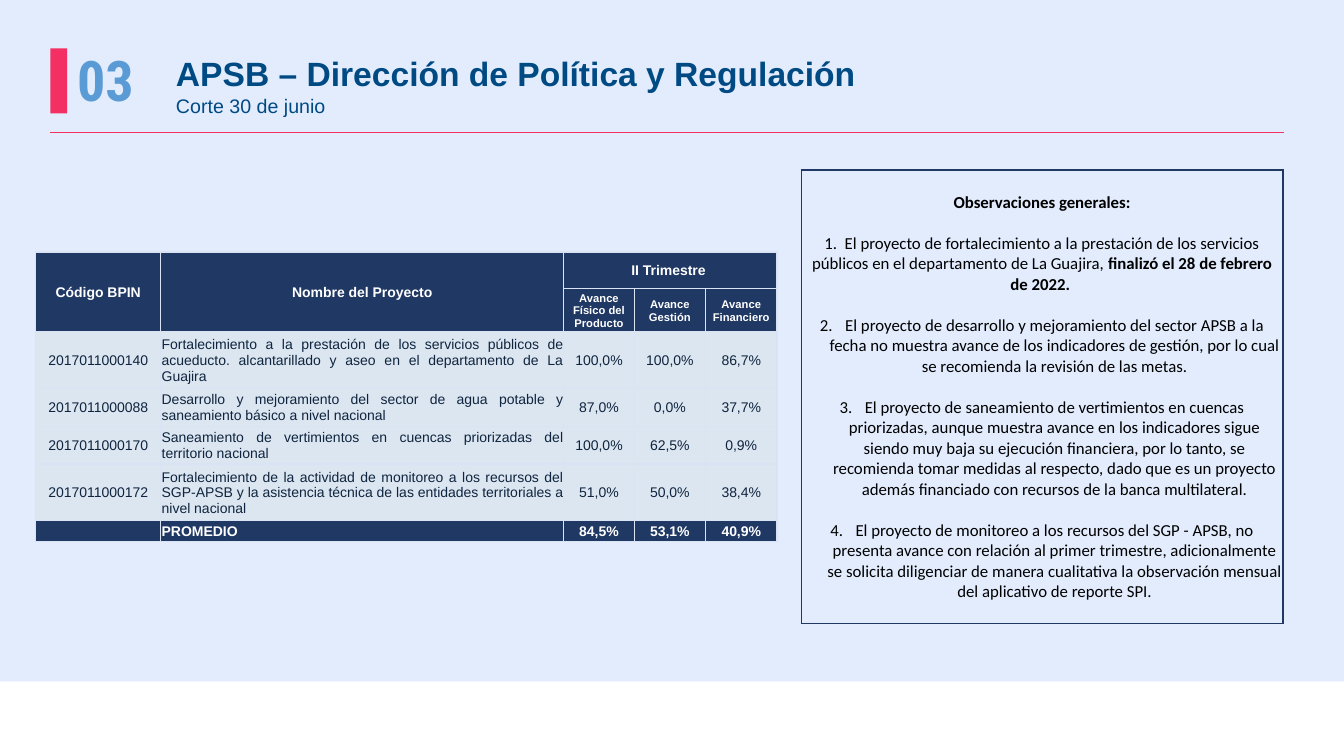
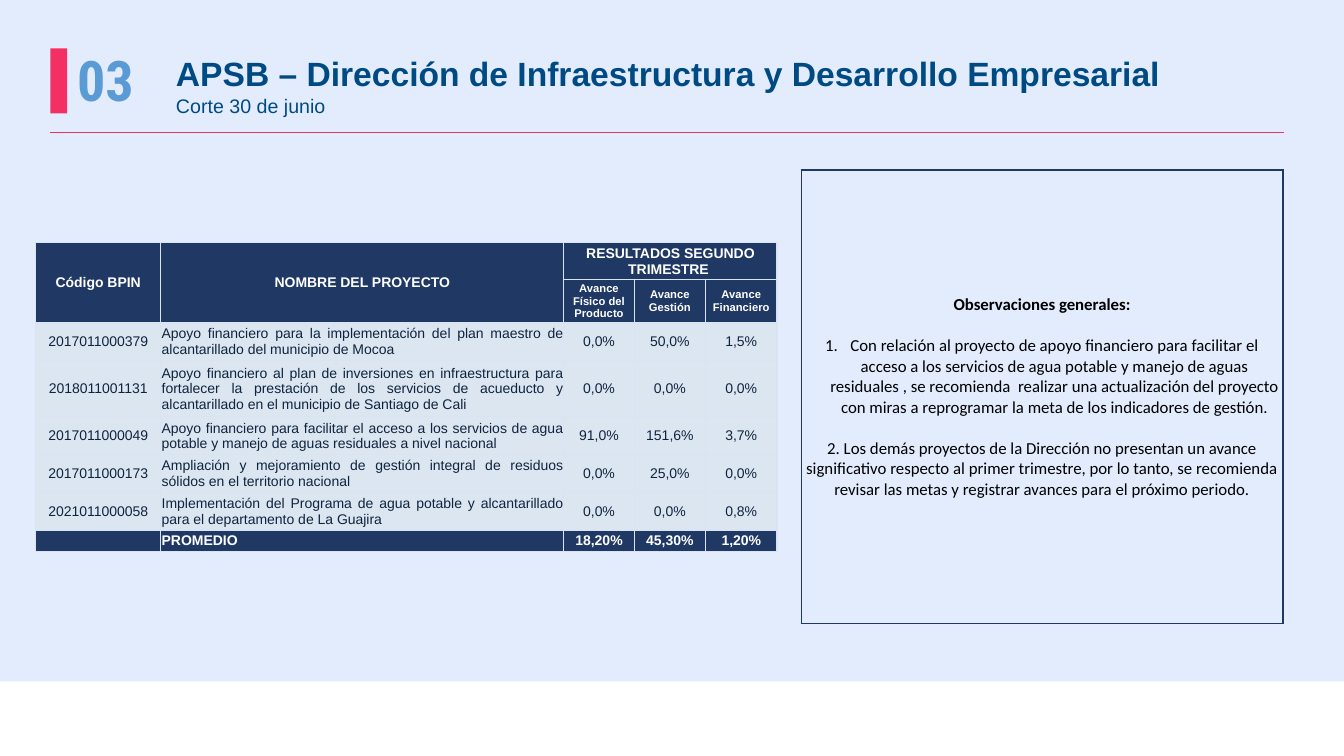
import pptx
import pptx.util
import pptx.dml.color
import pptx.enum.shapes
import pptx.enum.text
import pptx.oxml.ns
import lxml.etree

RGB = pptx.dml.color.RGBColor
ALIGN = pptx.enum.text.PP_ALIGN
ANCHOR = pptx.enum.text.MSO_ANCHOR

PALE_BLUE = RGB(0xE2, 0xEC, 0xFD)
WHITE = RGB(0xFF, 0xFF, 0xFF)
BLACK = RGB(0x00, 0x00, 0x00)
TITLE_BLUE = RGB(0x00, 0x4A, 0x84)
NUMBER_BLUE = RGB(0x5B, 0x9B, 0xD5)
PINK = RGB(0xF4, 0x2F, 0x63)
NAVY = RGB(0x20, 0x38, 0x64)
BODY_FILL = RGB(0xDC, 0xE6, 0xF1)
BODY_TEXT = RGB(0x0F, 0x24, 0x3E)
GRID = RGB(0xDA, 0xE3, 0xF3)

EMU_PER_PX = 9525
COLUMNS = [119, 384, 67, 68, 68]
HEADER_HEIGHTS = [35, 41]
LINE_HEIGHTS = {1: 20, 2: 36, 3: 54}
TABLE_LEFT, TABLE_MIDDLE = 34, 378
NOTE_GAP = 14.65
MEASURES = ["Avance Físico del Producto", "Avance Gestión", "Avance Financiero"]

POLICY = {
    "title": "APSB – Dirección de Política y Regulación",
    "name_header": "Nombre del Proyecto",
    "period": "II Trimestre ",
    "projects": [
        (3, "2017011000140", "Fortalecimiento a la prestación de los servicios públicos de acueducto. alcantarillado y aseo en el departamento de La Guajira ", "100,0%", "100,0%", "86,7%"),
        (2, "2017011000088", "Desarrollo y mejoramiento del sector de agua potable y saneamiento básico a nivel nacional", "87,0%", "0,0%", "37,7%"),
        (2, "2017011000170", "Saneamiento de vertimientos en cuencas priorizadas del territorio nacional", "100,0%", "62,5%", "0,9%"),
        (3, "2017011000172", "Fortalecimiento de la actividad de monitoreo a los recursos del SGP-APSB y la asistencia técnica de las entidades territoriales a nivel nacional", "51,0%", "50,0%", "38,4%"),
    ],
    "averages": ["84,5%", "53,1%", "40,9%"],
    "first_number": 2,
    "notes": [
        (False, [("1.  El proyecto de fortalecimiento a la prestación de los servicios públicos en el departamento de La Guajira, ", False),
                 ("finalizó el 28 de febrero de 2022. ", True)]),
        (True, [("El proyecto de desarrollo y mejoramiento del sector APSB a la fecha no muestra avance de los indicadores de gestión, por lo cual se recomienda la revisión de las metas.", False)]),
        (True, [("El proyecto de saneamiento de vertimientos en cuencas priorizadas, aunque muestra avance en los indicadores sigue siendo muy baja su ejecución financiera, por lo tanto, se recomienda tomar medidas al respecto, dado que es un proyecto además financiado con recursos de la banca multilateral.", False)]),
        (True, [("El proyecto de monitoreo a los recursos del SGP - APSB, no presenta avance con relación al primer trimestre, adicionalmente se solicita diligenciar de manera cualitativa la observación mensual del aplicativo de reporte SPI.", False)]),
    ],
}

INFRASTRUCTURE = {
    "title": "APSB – Dirección de Infraestructura y Desarrollo Empresarial",
    "name_header": "NOMBRE DEL PROYECTO",
    "period": "RESULTADOS SEGUNDO TRIMESTRE ",
    "projects": [
        (2, "2017011000379", "Apoyo financiero para la implementación del plan maestro de alcantarillado del municipio de Mocoa", "0,0%", "50,0%", "1,5%"),
        (3, "2018011001131", "Apoyo financiero al plan de inversiones en infraestructura para fortalecer la prestación de los servicios de acueducto y alcantarillado en el municipio de Santiago de Cali", "0,0%", "0,0%", "0,0%"),
        (2, "2017011000049", "Apoyo financiero para facilitar el acceso a los servicios de agua potable y manejo de aguas residuales a nivel nacional", "91,0%", "151,6%", "3,7%"),
        (2, "2017011000173", "Ampliación y mejoramiento de gestión integral de residuos sólidos en el territorio nacional", "0,0%", "25,0%", "0,0%"),
        (2, "2021011000058", "Implementación del Programa de agua potable y alcantarillado para el departamento de La Guajira", "0,0%", "0,0%", "0,8%"),
    ],
    "averages": ["18,20%", "45,30%", "1,20%"],
    "first_number": 1,
    "notes": [
        (True, [("Con relación al proyecto de apoyo financiero para facilitar el acceso a los servicios de agua potable y manejo de aguas residuales , se recomienda  realizar una actualización del proyecto con miras a reprogramar la meta de los indicadores de gestión.", False)]),
        (False, [("2. Los demás proyectos de la Dirección no presentan un avance significativo respecto al primer trimestre, por lo tanto, se recomienda revisar las metas y registrar avances para el próximo periodo.", False)]),
    ],
}


def px(length):
    return pptx.util.Emu(length * EMU_PER_PX)


def add_element(parent, tag, **attributes):
    element = lxml.etree.SubElement(parent, pptx.oxml.ns.qn(tag))
    for name, value in attributes.items():
        element.set(name, str(value))
    return element


def write(para, text, size=10, font="Arial", color=BODY_TEXT, bold=False, align=ALIGN.LEFT):
    para.alignment = align
    if not text:
        add_element(para._p, "a:endParaRPr", sz=size * 100)
        return
    span = para.add_run()
    span.text = text
    span.font.size = pptx.util.Pt(size)
    span.font.name = font
    span.font.bold = bold
    span.font.color.rgb = color


def add_block(page, left, top, width, height, color):
    block = page.shapes.add_shape(pptx.enum.shapes.MSO_SHAPE.RECTANGLE,
                                  px(left), px(top), px(width), px(height))
    block.shadow.inherit = False
    block.fill.solid()
    block.fill.fore_color.rgb = color
    block.line.fill.background()


def add_rule(page, left, right, top):
    rule = page.shapes.add_connector(pptx.enum.shapes.MSO_CONNECTOR.STRAIGHT,
                                     px(left), px(top), px(right), px(top))
    rule.line.color.rgb = PINK
    rule.line.width = pptx.util.Pt(0.5)
    add_element(rule._element.spPr, "a:effectLst")


def add_heading(page, title):
    heading = page.shapes.title
    heading.left, heading.top, heading.width, heading.height = px(158), px(46), px(1052), px(71)
    frame = heading.text_frame
    frame.word_wrap = True
    frame.auto_size = pptx.enum.text.MSO_AUTO_SIZE.NONE
    frame.vertical_anchor = ANCHOR.TOP
    write(frame.paragraphs[0], title, size=24, color=TITLE_BLUE, bold=True)
    write(frame.add_paragraph(), "Corte 30 de junio", size=14, color=TITLE_BLUE)


def add_section_number(page, number):
    box = page.shapes.add_textbox(px(64), px(39), px(77), px(74))
    box.text_frame.word_wrap = False
    write(box.text_frame.paragraphs[0], number, size=40, font="Roboto Condensed",
          color=NUMBER_BLUE, bold=True)


def add_grid(page, left, top, widths, heights):
    table = page.shapes.add_table(len(heights), len(widths), px(left), px(top),
                                  px(sum(widths)), px(sum(heights))).table
    table.first_row = False
    table.horz_banding = False
    for column, width in zip(table.columns, widths):
        column.width = px(width)
    for row, height in zip(table.rows, heights):
        row.height = px(height)
    return table


def format_cell(cell, border, fill=None):
    cell.vertical_anchor = ANCHOR.MIDDLE
    cell.margin_left = cell.margin_right = cell.margin_top = px(1)
    cell.margin_bottom = 0
    properties = cell._tc.get_or_add_tcPr()
    for side in ("a:lnL", "a:lnR", "a:lnT", "a:lnB"):
        line = add_element(properties, side, w=pptx.util.Pt(1))
        add_element(add_element(line, "a:solidFill"), "a:srgbClr", val=border)
    if fill is None:
        cell.fill.background()
    else:
        cell.fill.solid()
        cell.fill.fore_color.rgb = fill


def add_projects(page, content):
    projects = content["projects"]
    heights = HEADER_HEIGHTS + [LINE_HEIGHTS[project[0]] for project in projects] + [LINE_HEIGHTS[1]]
    table = add_grid(page, TABLE_LEFT, TABLE_MIDDLE - sum(heights) // 2, COLUMNS, heights)
    rows = [["Código BPIN", content["name_header"], content["period"], "", ""],
            ["", ""] + MEASURES]
    rows += [project[1:] for project in projects]
    rows.append(["", "PROMEDIO"] + content["averages"])
    last = len(rows) - 1
    for r, texts in enumerate(rows):
        is_body = 2 <= r < last
        for c, text in enumerate(texts):
            align = ALIGN.CENTER
            if c == 1 and r >= 2:
                align = ALIGN.JUSTIFY if is_body else ALIGN.LEFT
            cell = table.cell(r, c)
            format_cell(cell, GRID, BODY_FILL if is_body else NAVY)
            write(cell.text_frame.paragraphs[0], text, size=8 if r == 1 else 10,
                  color=BODY_TEXT if is_body else WHITE, bold=not is_body, align=align)
    for first, end in (((0, 0), (1, 0)), ((0, 1), (1, 1)), ((0, 2), (0, 4))):
        table.cell(*first).merge(table.cell(*end))


def number_paragraph(para, start):
    properties = para._p.get_or_add_pPr()
    properties.set("marL", str(px(24)))
    properties.set("indent", str(px(-24)))
    add_element(properties, "a:buFont", typeface="+mj-lt")
    add_element(properties, "a:buAutoNum", type="arabicPeriod", startAt=start)


def add_observations(page, content):
    cell = add_grid(page, 763, 162, [459], [432]).cell(0, 0)
    format_cell(cell, NAVY)
    style = {"size": 12, "font": "Calibri", "color": BLACK, "align": ALIGN.CENTER}
    frame = cell.text_frame
    write(frame.paragraphs[0], "Observaciones generales:", bold=True, **style)
    for numbered, pieces in content["notes"]:
        para = frame.add_paragraph()
        para.space_before = pptx.util.Pt(NOTE_GAP)
        if numbered:
            number_paragraph(para, content["first_number"])
        for text, bold in pieces:
            write(para, text, bold=bold, **style)


def add_page(deck, content):
    page = deck.slides.add_slide(deck.slide_layouts[5])
    add_block(page, 0, 649, 1280, 71, WHITE)
    add_heading(page, content["title"])
    add_block(page, 48, 46, 16, 62, PINK)
    add_rule(page, 48, 1223, 126)
    add_section_number(page, "03")
    add_projects(page, content)
    add_observations(page, content)


def main():
    deck = pptx.Presentation()
    deck.slide_width, deck.slide_height = px(1280), px(720)
    background = deck.slide_master.background.fill
    background.solid()
    background.fore_color.rgb = PALE_BLUE
    for content in (POLICY, INFRASTRUCTURE):
        add_page(deck, content)
    deck.save("out.pptx")


if __name__ == "__main__":
    main()
